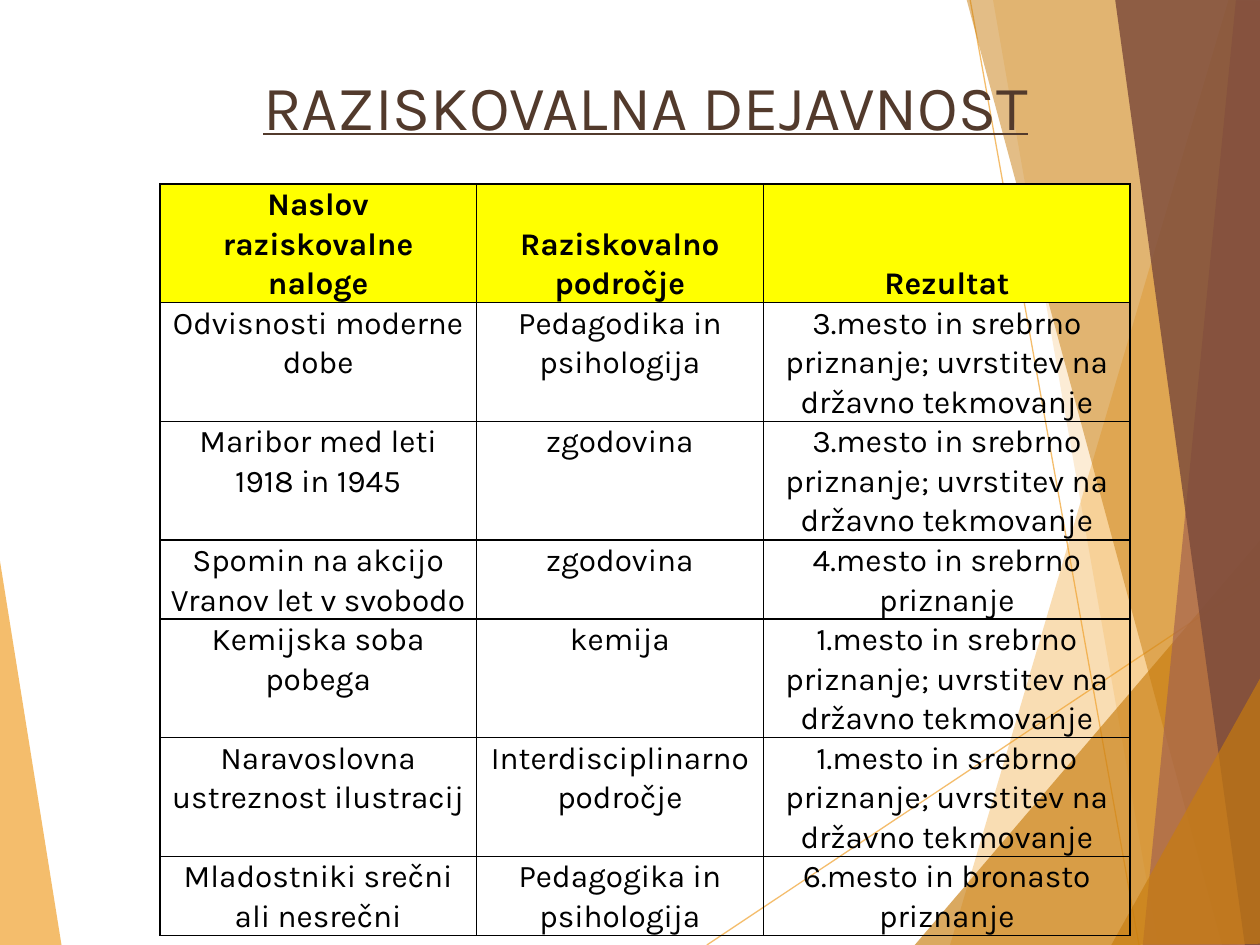
from lxml.etree import SubElement
from pptx import Presentation
from pptx.dml.color import RGBColor
from pptx.enum.shapes import MSO_CONNECTOR
from pptx.enum.text import MSO_ANCHOR, MSO_AUTO_SIZE, PP_ALIGN
from pptx.oxml.ns import qn
from pptx.util import Inches, Pt

AMBER = RGBColor(0xF0, 0xA2, 0x2E)
OCHRE = RGBColor(0xC8, 0x7D, 0x0E)
RUST = RGBColor(0xA5, 0x64, 0x4E)
BROWN = RGBColor(0x7C, 0x4B, 0x3B)
TITLE_BROWN = RGBColor(0x52, 0x3A, 0x2C)
YELLOW = RGBColor(0xFF, 0xFF, 0x00)
BLACK = RGBColor(0, 0, 0)
FONT = "Karla"


def set_opacity(shape, percent):
    color = shape.element.spPr.find(".//" + qn("a:srgbClr"))
    SubElement(color, qn("a:alpha"), val=str(percent * 1000))


def add_run(p, text, size, color):
    r = p.add_run()
    r.text = text
    r.font.name = FONT
    r.font.size = Pt(size)
    r.font.color.rgb = color
    return r


prs = Presentation()
prs.slide_width, prs.slide_height = Inches(10), Inches(7.5)
s = prs.slides.add_slide(prs.slide_layouts[5])

rays = [((5.61, 7.5), (10.01, 4.57)), ((7.7, 0), (9.04, 7.5))]
facets = [
    ([(-0.01, 4.39), (0.49, 7.51), (-0.01, 7.5)], AMBER, 70),
    ([(9.75, 0), (7.54, 7.5), (10.02, 7.51), (10.01, 0.01)], AMBER, 36),
    ([(7.88, -0.01), (9.19, 7.5), (10.01, 7.5), (10.01, -0.01)], AMBER, 20),
    ([(7.26, 7.5), (10, 4.29), (10.01, 7.5)], OCHRE, 66),
    ([(7.67, -0.01), (9.7, 7.5), (10.01, 7.49), (10.01, -0.01)], OCHRE, 50),
    ([(9.81, -0.01), (9.07, 7.5), (10.01, 7.5), (10, -0.01)], RUST, 70),
    ([(8.85, -0.01), (9.88, 7.5), (10.02, 7.5), (10, -0.01)], BROWN, 82),
    ([(8.82, 7.5), (10.02, 5.35), (10.02, 7.49)], OCHRE, 66),
]

for start, end in rays:
    ray = s.shapes.add_connector(
        MSO_CONNECTOR.STRAIGHT, *[Inches(v) for v in start + end])
    ray.line.color.rgb = AMBER
    ray.line.width = Pt(0.75)
    set_opacity(ray, 70)
    SubElement(ray.element.spPr, qn("a:effectLst"))

for corners, color, opacity in facets:
    points = [(Inches(x), Inches(y)) for x, y in corners]
    builder = s.shapes.build_freeform(*points[0])
    builder.add_line_segments(points[1:])
    facet = builder.convert_to_shape()
    facet.shadow.inherit = False
    facet.fill.solid()
    facet.fill.fore_color.rgb = color
    facet.line.fill.background()
    set_opacity(facet, opacity)

title = s.shapes.title
s.shapes.element.append(title.element)
title.left, title.top = Inches(1.15), Inches(0.21)
title.width, title.height = Inches(7.95), Inches(1.25)
tf = title.text_frame
tf.word_wrap = True
tf.auto_size = MSO_AUTO_SIZE.NONE
tf.vertical_anchor = MSO_ANCHOR.MIDDLE
p = tf.paragraphs[0]
p.alignment = PP_ALIGN.CENTER
add_run(p, "RAZISKOVALNA DEJAVNOST", 36, TITLE_BROWN).font.underline = True

NATIONAL = "mesto in srebrno priznanje; uvrstitev na državno tekmovanje"
rows = [
    ("Naslov raziskovalne naloge", "Raziskovalno področje", "Rezultat"),
    ("Odvisnosti moderne dobe", "Pedagodika in psihologija", "3." + NATIONAL),
    ("Maribor med leti 1918 in 1945", "zgodovina", "3." + NATIONAL),
    ("Spomin na akcijo Vranov let v svobodo", "zgodovina",
     "4.mesto in srebrno priznanje"),
    ("Kemijska soba pobega", "kemija", "1." + NATIONAL),
    ("Naravoslovna ustreznost ilustracij", "Interdisciplinarno področje",
     "1." + NATIONAL),
    ("Mladostniki srečni ali nesrečni", "Pedagogika in psihologija",
     "6.mesto in bronasto priznanje"),
]
col_widths = [2.51, 2.28, 2.91]
row_lines = [3, 3, 3, 2, 3, 3, 2]
LINE_HEIGHT = 0.31

table = s.shapes.add_table(
    len(rows), len(col_widths), Inches(1.27), Inches(1.46),
    Inches(sum(col_widths)), Inches(LINE_HEIGHT * sum(row_lines))).table
table.horz_banding = False
for column, width in zip(table.columns, col_widths):
    column.width = Inches(width)

for i, texts in enumerate(rows):
    header = i == 0
    table.rows[i].height = Inches(LINE_HEIGHT * row_lines[i])
    for j, text in enumerate(texts):
        cell = table.cell(i, j)
        cell.margin_left = cell.margin_right = Inches(0.07)
        cell.margin_top = cell.margin_bottom = 0
        cell.vertical_anchor = MSO_ANCHOR.BOTTOM if header else MSO_ANCHOR.TOP
        tcPr = cell._tc.get_or_add_tcPr()
        for side in ("lnL", "lnR", "lnT", "lnB"):
            border = SubElement(tcPr, qn("a:" + side), w=str(Pt(1)))
            fill = SubElement(border, qn("a:solidFill"))
            SubElement(fill, qn("a:srgbClr"), val=str(BLACK))
        if header:
            cell.fill.solid()
            cell.fill.fore_color.rgb = YELLOW
        else:
            cell.fill.background()
        p = cell.text_frame.paragraphs[0]
        p.alignment = PP_ALIGN.CENTER
        p.line_spacing = 1.07
        add_run(p, text, 18, BLACK).font.bold = header

prs.save("out.pptx")
